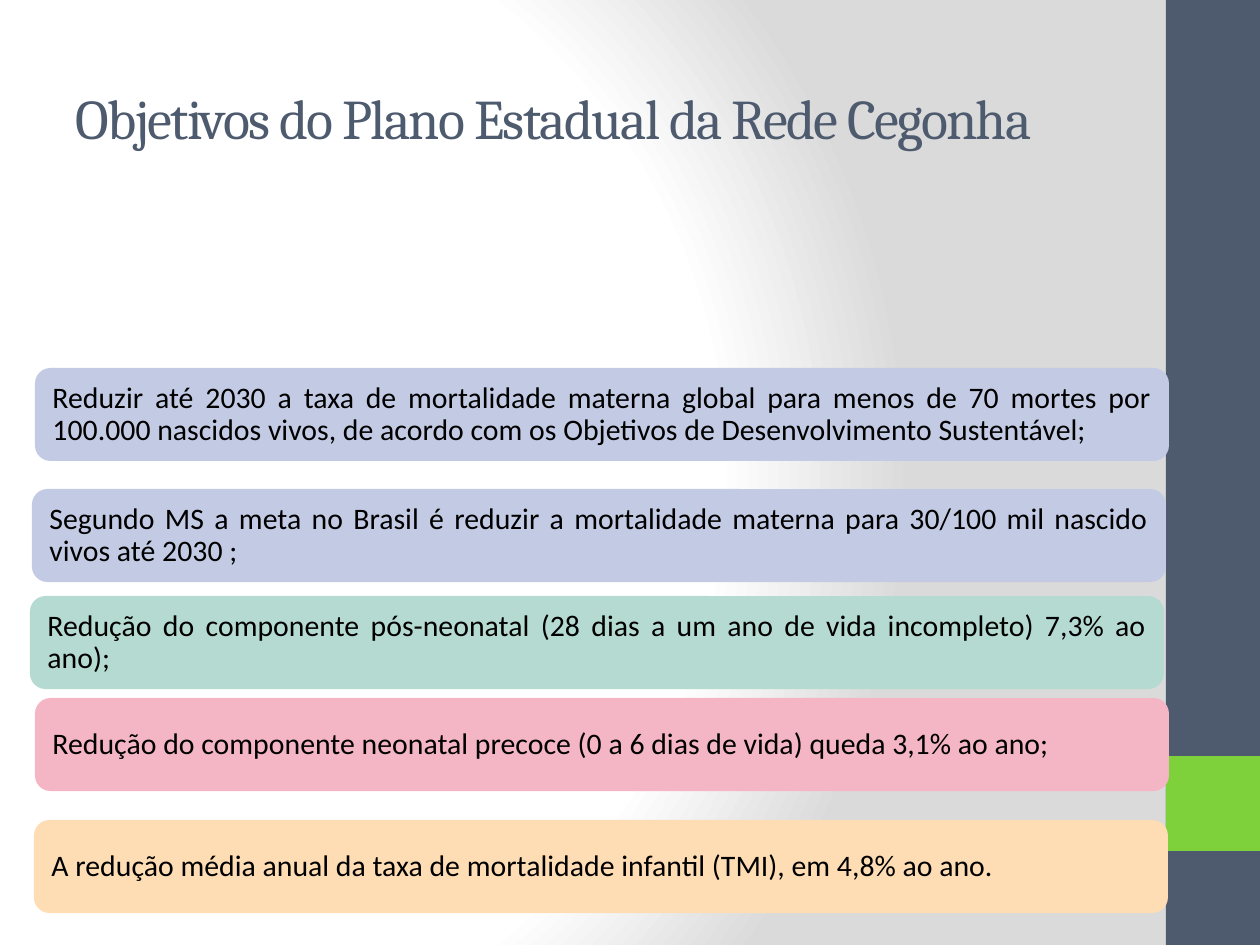
from pptx import Presentation
from pptx.dml.color import RGBColor
from pptx.enum.shapes import MSO_SHAPE
from pptx.enum.text import MSO_ANCHOR, PP_ALIGN
from pptx.oxml import parse_xml
from pptx.oxml.ns import nsdecls, qn
from pptx.util import Emu, Pt

THEME = {
    "slate": "4E5B6F", "green": "7FD13B", "black": "000000",
    "lilac": "C3CAE3", "mint": "B5DAD1", "pink": "F4B5C5", "peach": "FEDCB4",
    "light": "FFFFFF", "shade": "DADADA",
    "title_font": "Cambria", "body_font": "Calibri",
    "title_size": 32, "body_size": 17,
}


def px(length):
    return Emu(round(length * 914400 / 126))


def write(shape, text, *, font, size, color, align=PP_ALIGN.LEFT,
          inset=13, line_spacing=1.0, tracking=0):
    frame = shape.text_frame
    frame.word_wrap = True
    frame.vertical_anchor = MSO_ANCHOR.MIDDLE
    frame.margin_left = frame.margin_right = px(inset)
    frame.margin_top = frame.margin_bottom = px(inset)
    para = frame.paragraphs[0]
    para.alignment = align
    para.line_spacing = line_spacing
    span = para.add_run()
    span.text = text
    span.font.name = font
    span.font.size = Pt(size)
    span.font.color.rgb = RGBColor.from_string(THEME[color])
    if tracking:
        span.font._element.set("spc", str(tracking * 100))


deck = Presentation()
deck.slide_width, deck.slide_height = px(1260), px(945)
page = deck.slides.add_slide(deck.slide_layouts[6])

# Background: radial gradient from white to grey
page.background.fill.solid()
background = page.element.find(".//" + qn("p:bgPr"))
stops = "".join(
    f'<a:gs pos="{percent * 1000}"><a:srgbClr val="{THEME[color]}"/></a:gs>'
    for percent, color in [(0, "light"), (75, "light"), (100, "shade")])
background.replace(background[0], parse_xml(
    f'<a:gradFill {nsdecls("a")} rotWithShape="1"><a:gsLst>{stops}</a:gsLst>'
    '<a:path path="circle">'
    '<a:fillToRect l="20000" t="50000" r="100000" b="50000"/>'
    '</a:path></a:gradFill>'))

# Side band with its accent, then the objective cards
justify, left = PP_ALIGN.JUSTIFY, PP_ALIGN.LEFT
bands = [(0, 945, "slate"), (756, 95, "green")]
cards = [
    (35, 368, "lilac", justify,
     "Reduzir até 2030 a taxa de mortalidade materna global para menos de 70 "
     "mortes por 100.000 nascidos vivos, de acordo com os Objetivos de "
     "Desenvolvimento Sustentável;"),
    (32, 489, "lilac", justify,
     "Segundo MS a meta no Brasil é reduzir a mortalidade materna para "
     "30/100 mil nascido vivos até 2030 ;"),
    (30, 596, "mint", justify,
     "Redução do componente pós-neonatal (28 dias a um ano de vida "
     "incompleto) 7,3% ao ano);"),
    (35, 698, "pink", justify,
     "Redução do componente neonatal precoce (0 a 6 dias de vida) queda 3,1% "
     "ao ano;"),
    (34, 820, "peach", left,
     "A redução média anual da taxa de mortalidade infantil (TMI), em 4,8% "
     "ao ano."),
]
blocks = [(MSO_SHAPE.RECTANGLE, 1166, top, 94, height, color, None, "")
          for top, height, color in bands]
blocks += [(MSO_SHAPE.ROUNDED_RECTANGLE, x, top, 1134, 93, color, align, text)
           for x, top, color, align, text in cards]
for kind, x, top, width, height, color, align, text in blocks:
    box = page.shapes.add_shape(kind, px(x), px(top), px(width), px(height))
    box.shadow.inherit = False
    box.fill.solid()
    box.fill.fore_color.rgb = RGBColor.from_string(THEME[color])
    box.line.fill.background()
    if text:
        write(box, text, font=THEME["body_font"], size=THEME["body_size"],
              color="black", align=align, line_spacing=0.9)

# Title
title = page.shapes.add_textbox(px(63), px(38), px(1113), px(158))
write(title, "Objetivos do Plano Estadual da Rede Cegonha",
      font=THEME["title_font"], size=THEME["title_size"], color="slate",
      tracking=-1)

deck.save("out.pptx")
